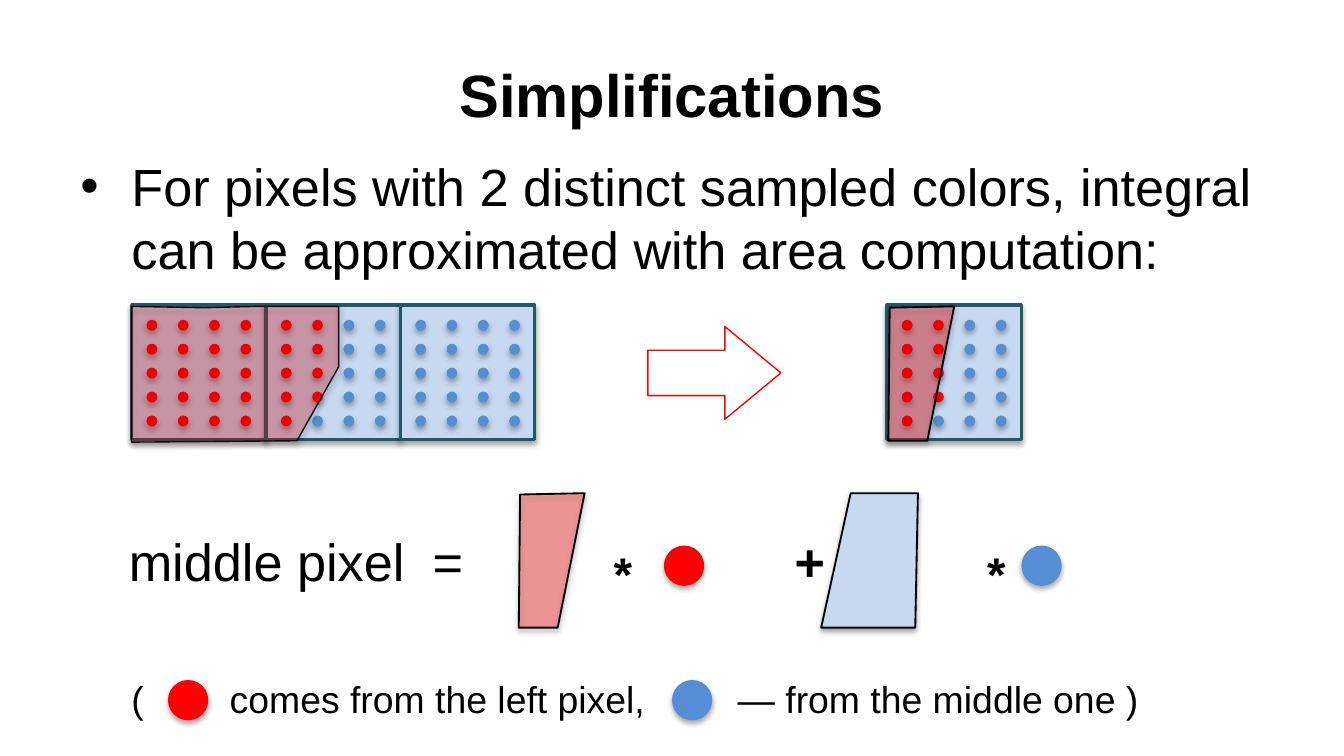
from lxml import etree
from pptx import Presentation
from pptx.dml.color import RGBColor
from pptx.enum.shapes import MSO_SHAPE
from pptx.enum.text import MSO_ANCHOR, PP_ALIGN
from pptx.oxml.ns import qn
from pptx.util import Inches, Pt

OVAL, SQUARE, ARROW = MSO_SHAPE.OVAL, MSO_SHAPE.RECTANGLE, MSO_SHAPE.RIGHT_ARROW
CENTER, MIDDLE = PP_ALIGN.CENTER, MSO_ANCHOR.MIDDLE

SLIDE_WIDTH = 10
SLIDE_HEIGHT = SLIDE_WIDTH * 9 / 16

THEME = {
    "red": "FF0000", "blue": "558ED5", "pale": "C6D9F1", "teal": "215968",
    "white": "FFFFFF", "black": "000000", "near_black": "0D0D0D",
    "title": {"name": "Arial", "size": Pt(32), "bold": True},
    "body": {"name": "Arial", "size": Pt(28)},
    "plus": {"name": "Courier New", "size": Pt(28), "bold": True},
    "star": {"name": "Courier New", "size": Pt(44), "bold": True},
    "note": {"name": "Arial", "size": Pt(20)},
}

# Each text: place, spans of (text, style), tab stops, and options
TEXTS = [
    {"at": (0.5, 0.23, 9, 0.94), "spans": [("Simplifications", "title")],
     "align": CENTER, "anchor": MIDDLE},
    {"at": (0.5, 1.1, 9, 1.06), "bullet": "•", "indent": 0.38,
     "spans": [("For pixels with 2 distinct sampled colors, integral "
                "can be approximated with area computation:", "body")]},
    {"at": (0.36, 3.67, 8.01, 0.63), "tabs": (0.5, 2.76, 4.07, 5.45, 6.85),
     "spans": [("\tmiddle pixel\t=\t", "body"), ("*", "star"),
               ("\t+\t", "plus"), ("*", "star")]},
    {"at": (0.72, 4.98, 8.61, 0.65), "tabs": (0.16, 0.89, 4.67),
     "spans": [("\t(\tcomes from the left pixel,\t— from the middle one )", "note")]},
]
STAR_BASELINE = "-14000"

# Sample colours of one pixel, row by row
LEFT = ["RRRR"] * 5
MIXED = ["RRBB"] * 4 + ["RBBB"]
RIGHT = ["BBBB"] * 5
SAMPLE_COLORS = {"R": "red", "B": "blue"}
PIXEL_GROUPS = [(6.6, [MIXED]), (0.98, [LEFT, MIXED, RIGHT])]
PIXEL_TOP, PIXEL_SIZE = 2.27, 1
DOT, DOT_INSET, DOT_STEP_X, DOT_STEP_Y = 0.08, 0.11, 0.233, 0.178

# Outlines are relative to the origin that follows them
COVERAGE = [(0, 0), (0.54, 0.01), (0.92, 0), (1.54, 0), (1.54, 0.45),
            (1.23, 1), (0, 1.01)]
RED_PART = [(0.01, 0.01), (0.49, 0), (0.29, 1), (0, 1)]
BLUE_PART = [(0.7, 1), (0, 1), (0.22, 0), (0.72, 0)]
OUTLINES = [
    (COVERAGE, (0.98, 2.28), "red", 25, "near_black", 0.75),
    (RED_PART, (6.61, 2.28), "red", 34, "black", 1),
    (BLUE_PART, (6.11, 3.67), "pale", 100, "black", 1),
    (RED_PART, (3.86, 3.67), "red", 34, "black", 1),
]
BIG_DOT = 0.3
BIG_DOTS = [(4.94, 4.06, "red"), (7.6, 4.06, "blue"),
            (1.25, 5.06, "red"), (5, 5.06, "blue")]
ARROW_AT, ARROW_SHAPE = (4.82, 2.43, 0.99, 0.69), (0.49, 0.604)


def rgb(name):
    return RGBColor.from_string(THEME[name])


def child(parent, tag, **attributes):
    return etree.SubElement(parent, qn(tag), attributes)


def paint(shape, fill, line=None, width=0, opacity=100, shadow=True):
    shape.fill.solid()
    shape.fill.fore_color.rgb = rgb(fill)
    if opacity < 100:
        color = next(shape._element.spPr.iter(qn("a:srgbClr")))
        child(color, "a:alpha", val=str(opacity * 1000))
    if line:
        shape.line.color.rgb = rgb(line)
        shape.line.width = Pt(width)
    else:
        shape.line.fill.background()
    shape.shadow.inherit = False
    if shadow:
        effects = shape._element.spPr.find(qn("a:effectLst"))
        outer = child(effects, "a:outerShdw", blurRad=str(Pt(3.1)), dist=str(Pt(1.8)),
                      dir="5400000", rotWithShape="0")
        color = child(outer, "a:srgbClr", val=THEME["black"])
        child(color, "a:alpha", val="35000")


def add_preset(shapes, kind, place, fill, **look):
    shape = shapes.add_shape(kind, *map(Inches, place))
    paint(shape, fill, **look)
    return shape


def add_pixels(page, left, pixels):
    """Draw neighbouring pixels as one group, with the samples above them."""
    shapes = page.shapes.add_group_shape().shapes
    lefts = [left + index * PIXEL_SIZE for index in range(len(pixels))]
    for x in lefts:
        add_preset(shapes, SQUARE, (x, PIXEL_TOP, PIXEL_SIZE, PIXEL_SIZE),
                   "pale", line="teal", width=1.75)
    for x, samples in zip(lefts, pixels):
        for row, codes in enumerate(samples):
            for column, code in enumerate(codes):
                place = (x + DOT_INSET + column * DOT_STEP_X,
                         PIXEL_TOP + DOT_INSET + row * DOT_STEP_Y, DOT, DOT)
                add_preset(shapes, OVAL, place, SAMPLE_COLORS[code])


def add_outline(page, points, origin, fill, opacity, line, width):
    corners = [(Inches(origin[0] + x), Inches(origin[1] + y)) for x, y in points]
    builder = page.shapes.build_freeform(*corners[0])
    builder.add_line_segments(corners[1:], close=True)
    paint(builder.convert_to_shape(), fill, line, width, opacity)


def add_text(page, at, spans, tabs=(), bullet=None, indent=0, align=None, anchor=None):
    box = page.shapes.add_textbox(*map(Inches, at))
    frame = box.text_frame
    frame.word_wrap = True
    if anchor is not None:
        frame.vertical_anchor = anchor
    para = frame.paragraphs[0]
    if align is not None:
        para.alignment = align
    properties = para._p.get_or_add_pPr()
    if bullet:
        properties.set("marL", str(Inches(indent)))
        properties.set("indent", str(-Inches(indent)))
        child(properties, "a:buFont", typeface=THEME["body"]["name"])
        child(properties, "a:buChar", char=bullet)
    if tabs:
        stops = child(properties, "a:tabLst")
        for stop in tabs:
            child(stops, "a:tab", pos=str(Inches(stop)), algn="l")
    for text, style in spans:
        span = para.add_run()
        span.text = text
        for name, value in THEME[style].items():
            setattr(span.font, name, value)
        span.font.color.rgb = rgb("black")
        if style == "star":
            span._r.get_or_add_rPr().set("baseline", STAR_BASELINE)


def main():
    deck = Presentation()
    deck.slide_width, deck.slide_height = Inches(SLIDE_WIDTH), Inches(SLIDE_HEIGHT)
    page = deck.slides.add_slide(deck.slide_layouts[6])
    for left, pixels in PIXEL_GROUPS:
        add_pixels(page, left, pixels)
    for text in TEXTS:
        add_text(page, **text)
    for outline in OUTLINES:
        add_outline(page, *outline)
    arrow = add_preset(page.shapes, ARROW, ARROW_AT, "white",
                       line="red", width=0.75, shadow=False)
    for index, value in enumerate(ARROW_SHAPE):
        arrow.adjustments[index] = value
    for x, y, color in BIG_DOTS:
        add_preset(page.shapes, OVAL, (x, y, BIG_DOT, BIG_DOT), color)
    deck.save("out.pptx")


if __name__ == "__main__":
    main()
